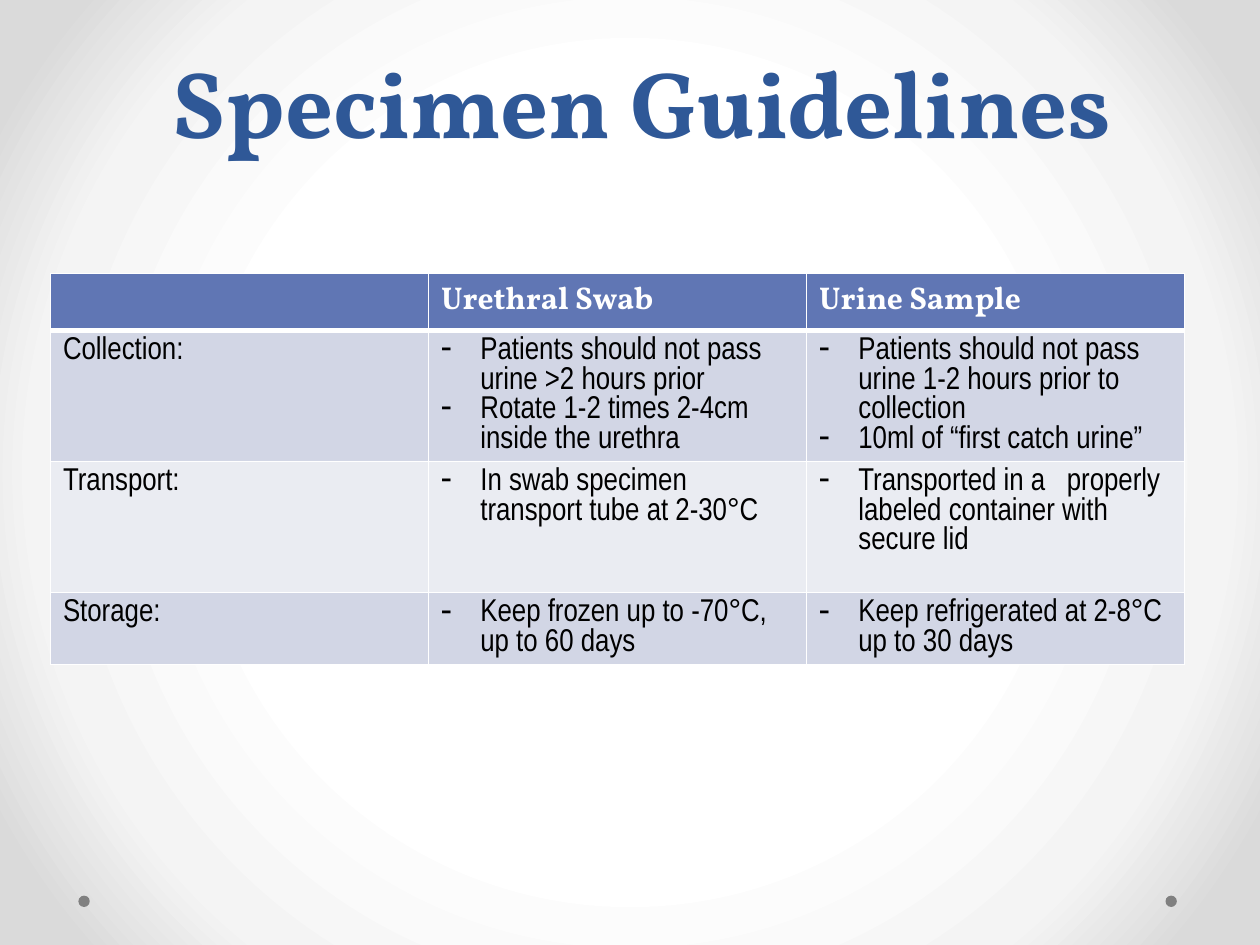
from pptx import Presentation
from pptx.dml.color import RGBColor
from pptx.enum.shapes import MSO_SHAPE as Shape
from pptx.enum.text import MSO_ANCHOR as Anchor, MSO_AUTO_SIZE as AutoSize, PP_ALIGN as Align
from pptx.oxml import parse_xml
from pptx.oxml.ns import nsdecls
from pptx.util import Pt

COLORS = {
    "title": "2F5897",
    "header": "6076B4",
    "band_dark": "D2D6E5",
    "band_light": "EAECF2",
    "white": "FFFFFF",
    "black": "000000",
    "dot": "808080",
}
BACKGROUND_STOPS = [(50, "FFFFFF"), (76, "F4F4F4"), (92, "DADADA")]
HEADERS = ["", "Urethral Swab", "Urine Sample"]
GUIDELINES = [
    ("Collection:",
     ["Patients should not pass urine >2 hours prior",
      "Rotate 1-2 times 2-4cm inside the urethra"],
     ["Patients should not pass urine 1-2 hours prior to collection",
      "10ml of “first catch urine”"]),
    ("Transport:",
     ["In swab specimen transport tube at 2-30°C"],
     ["Transported in a   properly labeled container with secure lid"]),
    ("Storage:",
     ["Keep frozen up to -70°C, up to 60 days"],
     ["Keep refrigerated at 2-8°C up to 30 days"]),
]
ROW_HEIGHTS = [31.5, 75, 75, 41]
COLUMN_WIDTH = 216


def rgb(name):
    return RGBColor.from_string(COLORS[name])


class SlideBuilder:
    heading_font = "Vollkorn"
    body_font = "Arial Narrow"
    body_size = 18
    bullet_indent = 22.5

    def __init__(self, presentation):
        self.slide = presentation.slides.add_slide(presentation.slide_layouts[5])

    def style(self, paragraph, font, size, color, bold=False):
        for run in paragraph.runs:
            run.font.name = font
            run.font.size = Pt(size)
            run.font.bold = bold
            run.font.color.rgb = rgb(color)

    def background(self, stops):
        self.slide.background.fill.solid()
        properties = self.slide.background._cSld.bg.bgPr
        stop_xml = "".join(
            f'<a:gs pos="{position * 1000}"><a:srgbClr val="{color}"/></a:gs>'
            for position, color in stops)
        gradient = parse_xml(
            f'<a:gradFill {nsdecls("a")} rotWithShape="1"><a:gsLst>{stop_xml}</a:gsLst>'
            '<a:path path="circle"><a:fillToRect l="50000" t="50000" r="50000" b="50000"/>'
            '</a:path></a:gradFill>')
        properties.replace(properties[0], gradient)

    def dot(self, left, top, size):
        shape = self.slide.shapes.add_shape(Shape.OVAL, Pt(left), Pt(top), Pt(size), Pt(size))
        shape.shadow.inherit = False
        shape.fill.solid()
        shape.fill.fore_color.rgb = rgb("dot")
        shape.line.fill.background()

    def title(self, text, left, top, width, height):
        shape = self.slide.shapes.title
        shape.left, shape.top, shape.width, shape.height = map(Pt, (left, top, width, height))
        text_frame = shape.text_frame
        text_frame.text = text
        text_frame.auto_size = AutoSize.NONE
        text_frame.vertical_anchor = Anchor.BOTTOM
        paragraph = text_frame.paragraphs[0]
        paragraph.alignment = Align.CENTER
        paragraph.line_spacing = Pt(58)
        self.style(paragraph, self.heading_font, 54, "title", True)

    def table(self, left, top, column_width, row_heights, headers, rows):
        shape = self.slide.shapes.add_table(
            len(row_heights), len(headers), Pt(left), Pt(top),
            Pt(column_width * len(headers)), Pt(sum(row_heights)))
        table = shape.table
        table.horz_banding = False
        for column in table.columns:
            column.width = Pt(column_width)
        for row, height in zip(table.rows, row_heights):
            row.height = Pt(height)
        for index, header in enumerate(headers):
            self.header_cell(table.cell(0, index), header)
        for row_index, (label, *lists) in enumerate(rows, 1):
            band = "band_dark" if row_index % 2 else "band_light"
            top_width = 3 if row_index == 1 else 1
            self.body_cell(table.cell(row_index, 0), [label], band, top_width)
            for column_index, items in enumerate(lists, 1):
                self.body_cell(table.cell(row_index, column_index), items, band, top_width, True)

    def header_cell(self, cell, text):
        cell.text_frame.text = text
        self.style(cell.text_frame.paragraphs[0], self.heading_font, self.body_size, "white", True)
        self.frame_cell(cell, "header", bottom=3)

    def body_cell(self, cell, lines, fill, top_width, bulleted=False):
        cell.text_frame.text = "\n".join(lines)
        for paragraph in cell.text_frame.paragraphs:
            self.style(paragraph, self.body_font, self.body_size, "black")
            if bulleted:
                self.bullet(paragraph)
        self.frame_cell(cell, fill, top=top_width)

    def bullet(self, paragraph):
        properties = paragraph._p.get_or_add_pPr()
        properties.set("marL", str(Pt(self.bullet_indent)))
        properties.set("indent", str(-Pt(self.bullet_indent)))
        properties.append(parse_xml(f'<a:buChar {nsdecls("a")} char="-"/>'))

    def frame_cell(self, cell, fill, top=1, bottom=1):
        properties = cell._tc.get_or_add_tcPr()
        for side, width in (("L", 1), ("R", 1), ("T", top), ("B", bottom)):
            properties.append(parse_xml(
                f'<a:ln{side} {nsdecls("a")} w="{Pt(width)}"><a:solidFill>'
                f'<a:srgbClr val="{COLORS["white"]}"/></a:solidFill></a:ln{side}>'))
        cell.fill.solid()
        cell.fill.fore_color.rgb = rgb(fill)


def main():
    presentation = Presentation()
    presentation.slide_width, presentation.slide_height = Pt(720), Pt(540)
    builder = SlideBuilder(presentation)
    builder.background(BACKGROUND_STOPS)
    for left in (666, 44.8):
        builder.dot(left, 511.8, 6.5)
    builder.title("Specimen Guidelines", 49.7, 41.8, 634.3, 51.8)
    builder.table(28.8, 156.4, COLUMN_WIDTH, ROW_HEIGHTS, HEADERS, GUIDELINES)
    presentation.save("out.pptx")


if __name__ == "__main__":
    main()
